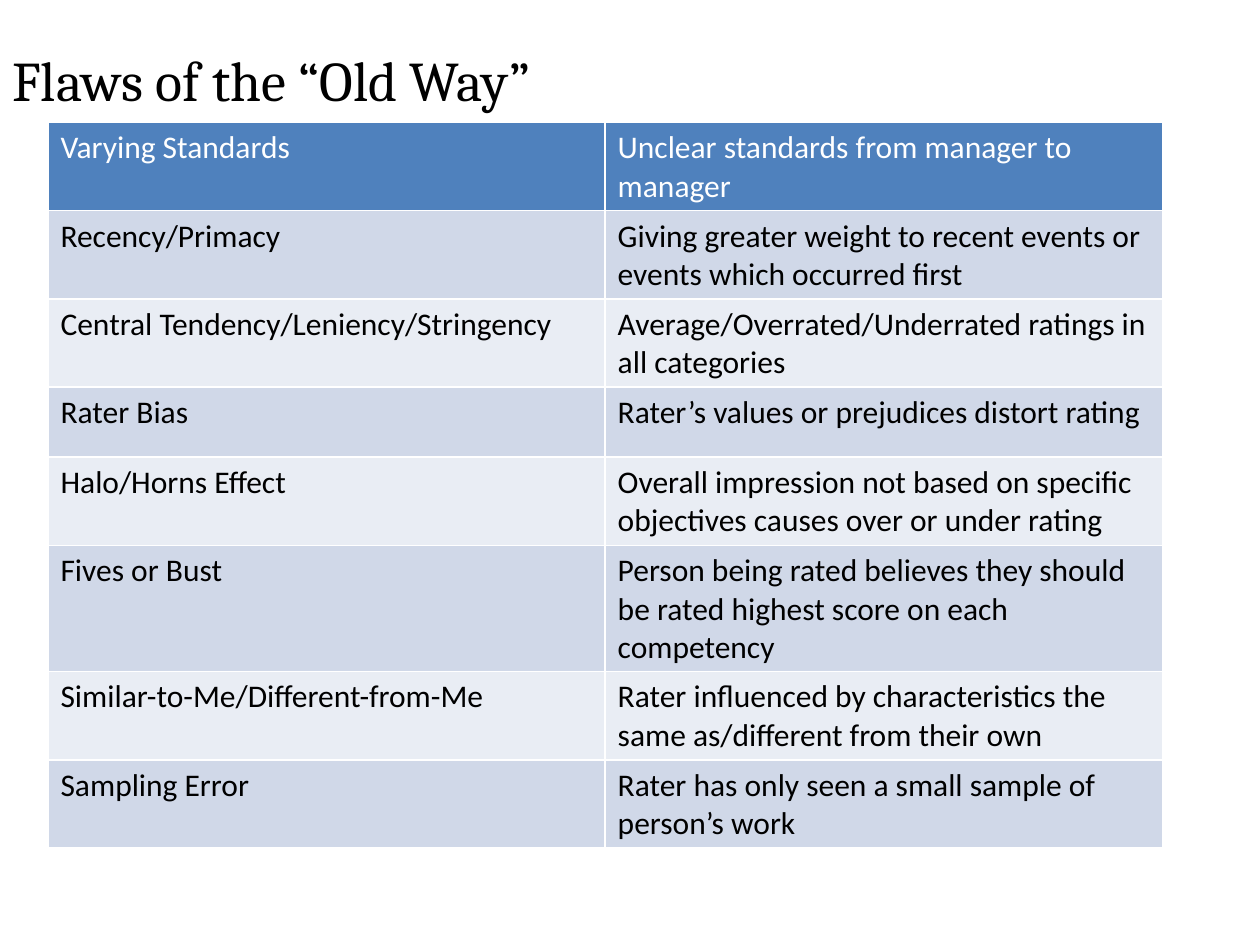
from pptx import Presentation
from pptx.dml.color import RGBColor
from pptx.enum.text import MSO_ANCHOR
from pptx.util import Pt

MIDDLE = MSO_ANCHOR.MIDDLE

# Content
TITLE = "Flaws of the “Old Way”"
FLAWS = [
    ("Varying Standards", "Unclear standards from manager to manager"),
    ("Recency/Primacy", "Giving greater weight to recent events or events which occurred first"),
    ("Central Tendency/Leniency/Stringency", "Average/Overrated/Underrated ratings in all categories"),
    ("Rater Bias", "Rater’s values or prejudices distort rating"),
    ("Halo/Horns Effect", "Overall impression not based on specific objectives causes over or under rating"),
    ("Fives or Bust", "Person being rated believes they should be rated highest score on each competency"),
    ("Similar-to-Me/Different-from-Me", "Rater influenced by characteristics the same as/different from their own"),
    ("Sampling Error", "Rater has only seen a small sample of person’s work"),
]
COLORS = {
    "text": "000000",
    "header_text": "FFFFFF",
    "header": "4F81BD",
    "odd": "D0D8E8",
    "even": "E9EDF4",
}
COLUMN_WIDTH = 318.4
ROW_HEIGHT = 40


def add_span(para, text, font, size, color):
    span = para.add_run()
    span.text = text
    span.font.name = font
    span.font.size = Pt(size)
    span.font.bold = False
    span.font.color.rgb = RGBColor.from_string(COLORS[color])


deck = Presentation()
deck.slide_width, deck.slide_height = Pt(720), Pt(540)
page = deck.slides.add_slide(deck.slide_layouts[6])

# Title
box = page.shapes.add_textbox(Pt(0), Pt(0), Pt(593.3), Pt(90))
box.text_frame.word_wrap = True
box.text_frame.vertical_anchor = MIDDLE
add_span(box.text_frame.paragraphs[0], TITLE, "Cambria", 32, "text")

# Table of flaws: the default table style draws the white borders
table = page.shapes.add_table(
    len(FLAWS), 2, Pt(27.4), Pt(70),
    Pt(2 * COLUMN_WIDTH), Pt(len(FLAWS) * ROW_HEIGHT),
).table
for column in table.columns:
    column.width = Pt(COLUMN_WIDTH)

for row_index, flaw in enumerate(FLAWS):
    table.rows[row_index].height = Pt(ROW_HEIGHT)
    if row_index == 0:
        fill, color = "header", "header_text"
    else:
        fill, color = ("odd" if row_index % 2 else "even"), "text"
    for column_index, text in enumerate(flaw):
        cell = table.cell(row_index, column_index)
        cell.fill.solid()
        cell.fill.fore_color.rgb = RGBColor.from_string(COLORS[fill])
        add_span(cell.text_frame.paragraphs[0], text, "Calibri", 18, color)

deck.save("out.pptx")
